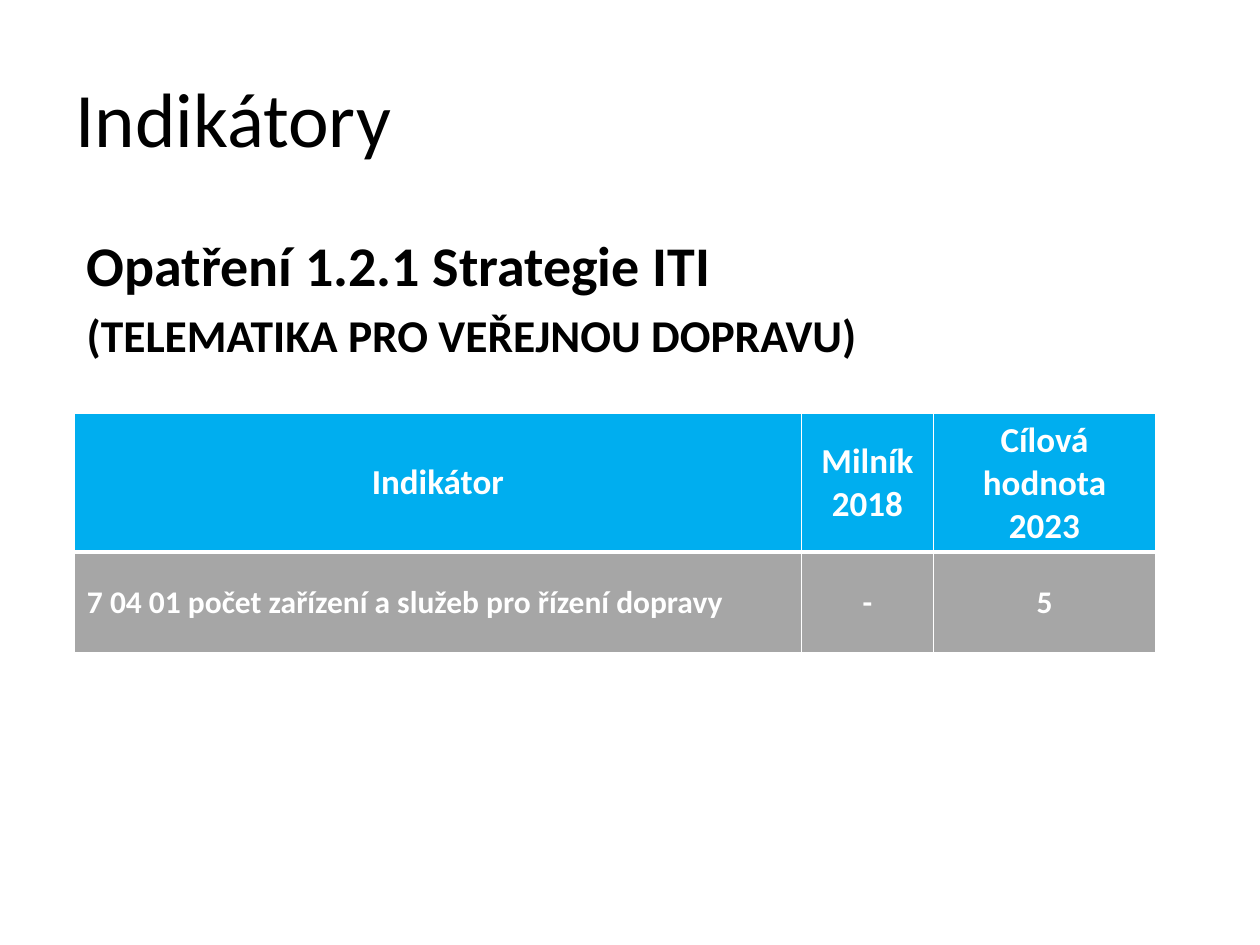
from pptx import Presentation
from pptx.dml.color import RGBColor
from pptx.enum.text import MSO_ANCHOR as Anchor, PP_ALIGN as Align
from pptx.oxml import parse_xml
from pptx.oxml.ns import nsdecls
from pptx.util import Inches, Pt

BLACK = RGBColor(0x00, 0x00, 0x00)
WHITE = RGBColor(0xFF, 0xFF, 0xFF)
BLUE = RGBColor(0x00, 0xAE, 0xEF)
GREY = RGBColor(0xA6, 0xA6, 0xA6)


class SlideBuilder:
    font_name = "Calibri"

    def __init__(self, slide):
        self.slide = slide

    def format_paragraph(self, paragraph, size, color, bold=False, align=Align.LEFT):
        paragraph.alignment = align
        for run in paragraph.runs:
            run.font.name = self.font_name
            run.font.size = Pt(size)
            run.font.bold = bold
            run.font.color.rgb = color

    def place(self, shape, left, top, width, height):
        shape.left, shape.top = Inches(left), Inches(top)
        shape.width, shape.height = Inches(width), Inches(height)

    def title(self, text, box):
        shape = self.slide.shapes.title
        self.place(shape, *box)
        shape.text_frame.text = text
        shape.text_frame.vertical_anchor = Anchor.MIDDLE
        self.format_paragraph(shape.text_frame.paragraphs[0], 44, BLACK)

    def text(self, lines, box):
        shape = self.slide.shapes.add_textbox(*map(Inches, box))
        frame = shape.text_frame
        frame.word_wrap = True
        frame.text = "\n".join(text for text, size in lines)
        for index, (text, size) in enumerate(lines):
            paragraph = frame.paragraphs[index]
            self.format_paragraph(paragraph, size, BLACK, bold=True)
            if index:
                paragraph.space_before = Pt(0.2 * size)

    def borders(self, cell, widths):
        properties = cell._tc.get_or_add_tcPr()
        for index, (side, width) in enumerate(widths.items()):
            line = parse_xml(
                f'<a:ln{side} {nsdecls("a")} w="{Pt(width)}"><a:solidFill>'
                f'<a:srgbClr val="{WHITE}"/></a:solidFill></a:ln{side}>')
            properties.insert(index, line)

    def table(self, rows, box, column_widths, row_heights):
        shape = self.slide.shapes.add_table(
            len(rows), len(column_widths), *map(Inches, box))
        table = shape.table
        for column, width in zip(table.columns, column_widths):
            column.width = Inches(width)
        for row, height in zip(table.rows, row_heights):
            row.height = Inches(height)

        for row_index, texts in enumerate(rows):
            header = row_index == 0
            top, bottom = (1, 3) if header else (3, 1)
            for column_index, text in enumerate(texts):
                cell = table.cell(row_index, column_index)
                cell.text_frame.text = text
                cell.vertical_anchor = Anchor.MIDDLE
                cell.fill.solid()
                cell.fill.fore_color.rgb = BLUE if header else GREY
                centred = header or column_index > 0
                self.format_paragraph(
                    cell.text_frame.paragraphs[0], 20 if header else 18, WHITE,
                    bold=True, align=Align.CENTER if centred else Align.LEFT)
                self.borders(cell, {"L": 1, "R": 1, "T": top, "B": bottom})


def main():
    presentation = Presentation()
    presentation.slide_width, presentation.slide_height = Inches(10), Inches(7.5)
    title_only = presentation.slide_layouts[5]
    builder = SlideBuilder(presentation.slides.add_slide(title_only))

    # Heading
    builder.title("Indikátory", (0.5, 0.3, 9, 1.25))

    # Measure name
    builder.text(
        [("Opatření 1.2.1 Strategie ITI", 32),
         ("(TELEMATIKA PRO VEŘEJNOU DOPRAVU)", 26)],
        (0.59, 1.78, 9, 4.95))

    # Indicator table
    builder.table(
        [("Indikátor", "Milník 2018", "Cílová hodnota 2023"),
         ("7 04 01 počet zařízení a služeb pro řízení dopravy", "-", "5")],
        (0.59, 3.28, 8.58, 1.9),
        column_widths=(5.77, 1.05, 1.76),
        row_heights=(1.1, 0.8))

    presentation.save("out.pptx")


if __name__ == "__main__":
    main()
